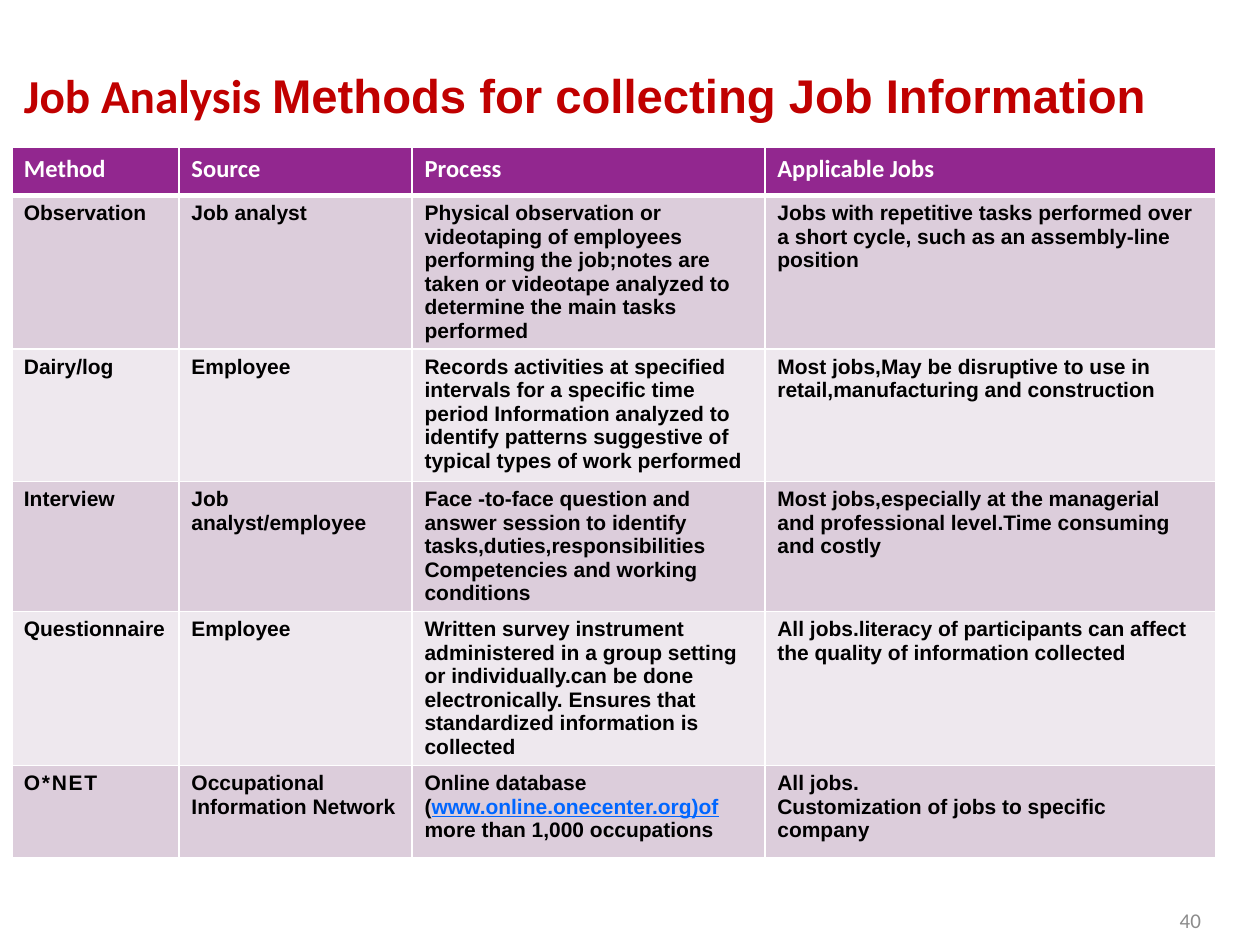
"""Build the slide on job analysis methods with its comparison table."""
from lxml import etree
from pptx import Presentation
from pptx import util as u
from pptx.dml.color import RGBColor
from pptx.enum import text
from pptx.oxml.ns import qn

COLORS = {
    "title": "C00000", "header": "92278F", "odd": "DCCDDB", "even": "EEE8EE",
    "white": "FFFFFF", "body": "000000", "link": "0066FF", "number": "8C8C8C",
}
COLUMN_WIDTHS = [1.32, 1.85, 2.8, 3.58]
ROW_HEIGHTS = [0.38, 1.22, 1.05, 1.03, 1.22, 0.73]
LINK = "www.online.onecenter.org)of"
METHODS = [
    ["Method", "Source", "Process", "Applicable Jobs"],
    ["Observation", "Job analyst",
     "Physical observation or videotaping of employees performing the job;notes are "
     "taken or videotape analyzed to determine the main tasks performed",
     "Jobs with repetitive tasks performed over a short cycle, such as an "
     "assembly-line position"],
    ["Dairy/log", "Employee",
     "Records activities at specified intervals for a specific time period Information "
     "analyzed to identify patterns suggestive of typical types of work performed",
     "Most jobs,May be disruptive to use in retail,manufacturing and construction"],
    ["Interview", "Job analyst/employee",
     "Face -to-face question and answer session to identify "
     "tasks,duties,responsibilities\nCompetencies and working conditions",
     "Most jobs,especially at the managerial and professional level.Time consuming "
     "and costly"],
    ["Questionnaire", "Employee",
     "Written survey instrument administered in a group setting or individually.can be "
     "done electronically. Ensures that standardized information is collected",
     "All jobs.literacy of participants can affect the quality of information collected"],
    ["O*NET", "Occupational\nInformation Network",
     f"Online database ({LINK} more than 1,000 occupations",
     "All jobs.\nCustomization of jobs to specific company"],
]


def color(name):
    return RGBColor.from_string(COLORS[name])


def style(font, size, face, color_name, bold=True):
    font.size, font.name, font.bold = u.Pt(size), face, bold
    font.color.rgb = color(color_name)


def place(shape, left, top, width, height):
    shape.left, shape.top = u.Inches(left), u.Inches(top)
    shape.width, shape.height = u.Inches(width), u.Inches(height)


def add_title(slide):
    title = slide.shapes.title
    place(title, 0.09, 0.36, 9.99, 0.78)
    frame = title.text_frame
    frame.auto_size = text.MSO_AUTO_SIZE.NONE
    frame.vertical_anchor = text.MSO_ANCHOR.MIDDLE
    heading = frame.paragraphs[0]
    heading.alignment = text.PP_ALIGN.LEFT
    for words, face in [("Job Analysis ", "Calibri"),
                        ("Methods for collecting Job Information", "Arial")]:
        run = heading.add_run()
        run.text = words
        style(run.font, 27, face, "title")


def set_borders(cell, bottom_width):
    properties = cell._tc.get_or_add_tcPr()
    for side, width in [("L", 1), ("R", 1), ("T", 1), ("B", bottom_width)]:
        line = etree.SubElement(properties, qn(f"a:ln{side}"), w=str(u.Pt(width)))
        fill = etree.SubElement(line, qn("a:solidFill"))
        etree.SubElement(fill, qn("a:srgbClr"), val=COLORS["white"])


def write_cell(cell, words, is_header):
    for index, line in enumerate(words.split("\n")):
        frame = cell.text_frame
        paragraph = frame.add_paragraph() if index else frame.paragraphs[0]
        before, link, after = line.partition(LINK)
        for part in filter(None, (before, link, after)):
            run = paragraph.add_run()
            run.text = part
            if part == LINK:
                run.font.underline = True
                run.font.color.rgb = color("link")
        if is_header:
            style(paragraph.font, 14, "Calibri", "white")
        else:
            style(paragraph.font, 12, "Arial", "body")


def add_methods_table(slide):
    frame = slide.shapes.add_table(
        len(METHODS), len(COLUMN_WIDTHS), u.Inches(0.1), u.Inches(1.17),
        u.Inches(sum(COLUMN_WIDTHS)), u.Inches(sum(ROW_HEIGHTS)))
    table = frame.table
    for column, width in zip(table.columns, COLUMN_WIDTHS):
        column.width = u.Inches(width)
    for index, (row, height, entries) in enumerate(zip(table.rows, ROW_HEIGHTS, METHODS)):
        row.height = u.Inches(height)
        shade = "header" if index == 0 else "odd" if index % 2 else "even"
        for cell, words in zip(row.cells, entries):
            set_borders(cell, 1 if index else 3)
            cell.fill.solid()
            cell.fill.fore_color.rgb = color(shade)
            write_cell(cell, words, index == 0)
        method = row.cells[0]
        method.margin_left, method.margin_right = u.Inches(0.09), u.Inches(0.05)
    table.cell(3, 1).text_frame.paragraphs[0].alignment = text.PP_ALIGN.JUSTIFY
    network = table.cell(5, 0).text_frame.paragraphs[0].runs[0]
    network.font._element.set("spc", "100")


def add_slide_number(slide, number):
    box = slide.shapes.add_textbox(*map(u.Inches, (9.13, 7.1, 0.5, 0.4)))
    frame = box.text_frame
    frame.word_wrap = True
    frame.vertical_anchor = text.MSO_ANCHOR.MIDDLE
    paragraph = frame.paragraphs[0]
    paragraph.text = number
    paragraph.alignment = text.PP_ALIGN.RIGHT
    style(paragraph.font, 12, "Calibri", "number", bold=False)


def main():
    deck = Presentation()
    deck.slide_width, deck.slide_height = u.Inches(10), u.Inches(7.5)
    slide = deck.slides.add_slide(deck.slide_layouts[5])
    add_title(slide)
    add_methods_table(slide)
    add_slide_number(slide, "40")
    deck.save("out.pptx")


if __name__ == "__main__":
    main()
